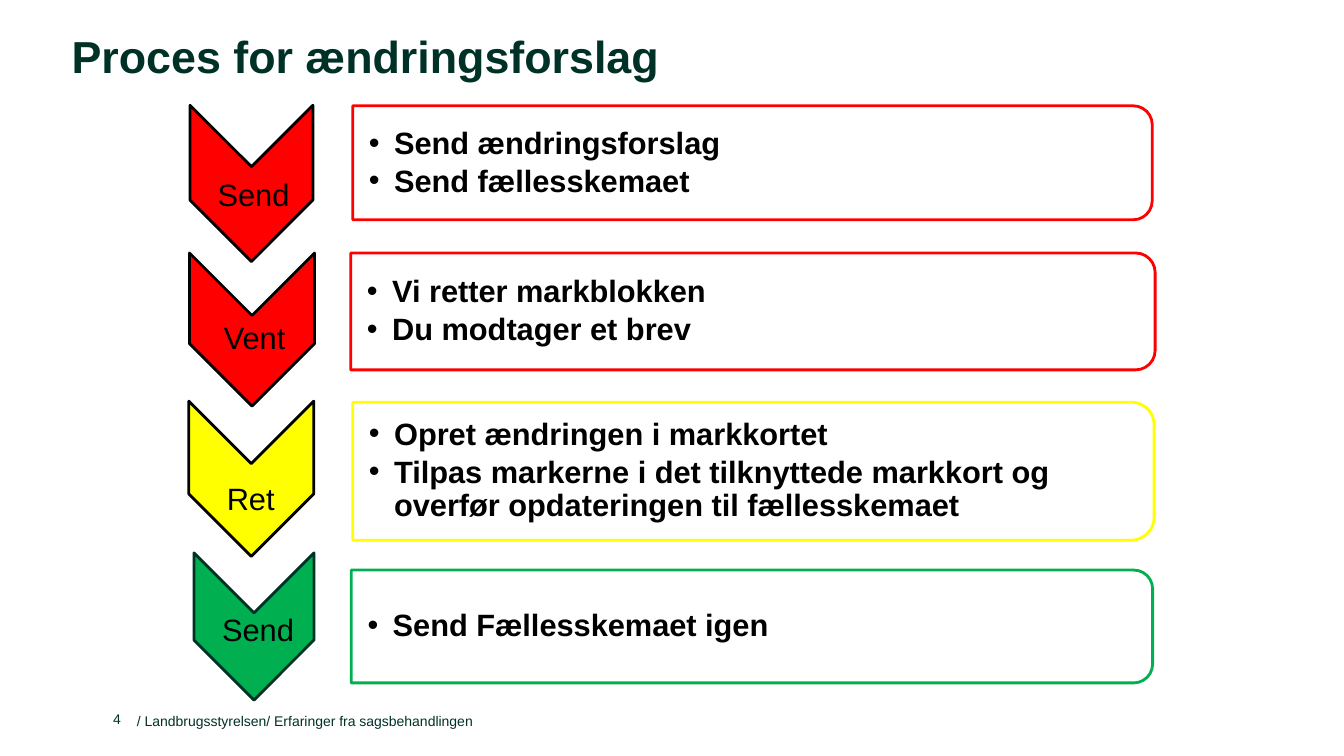
from dataclasses import dataclass

import lxml.etree
import pptx
import pptx.dml.color
import pptx.enum.shapes
import pptx.enum.text
import pptx.oxml.ns
import pptx.util

Pt = pptx.util.Pt
Shape = pptx.enum.shapes.MSO_SHAPE
Align = pptx.enum.text.PP_ALIGN
Anchor = pptx.enum.text.MSO_ANCHOR
qn = pptx.oxml.ns.qn

HUES = {"ink": "003127", "text": "000000", "paper": "FFFFFF",
        "red": "FF0000", "yellow": "FFFF00", "green": "00B050"}
FONT = "Arial"


@dataclass
class Box:
    left: float
    top: float
    width: float
    height: float


@dataclass
class Turned:
    """A shape turned a quarter: its centre, and its size before the turn."""
    mid_x: float
    mid_y: float
    width: float
    height: float


@dataclass
class Step:
    label: str
    hue: str
    edge: str
    arrow: Turned
    tag: Box
    panel: Turned
    area: Box
    lines: list[str]


STEPS = [
    Step("Send", "red", "text", Turned(179.6, 131, 111.6, 87.8),
         Box(136.8, 125.3, 88.6, 30.2), Turned(537.5, 116.3, 81.4, 571),
         Box(252, 79.9, 567.4, 73.4),
         ["Send ændringsforslag", "Send fællesskemaet"]),
    Step("Vent", "red", "text", Turned(180, 235.4, 109.4, 89.3),
         Box(135.4, 226.1, 92.9, 32.4), Turned(537.8, 222.5, 83.5, 574.6),
         Box(250.6, 185, 571, 75.6),
         ["Vi retter markblokken", "Du modtager et brev"]),
    Step("Ret", "yellow", "text", Turned(179.5, 342, 110.9, 89.3),
         Box(137, 342, 84.2, 31.7), Turned(538.2, 336.6, 98.6, 572.4),
         Box(252, 291.6, 568.8, 89.3),
         ["Opret ændringen i markkortet",
          "Tilpas markerne i det tilknyttede markkort og "
          "overfør opdateringen til fællesskemaet"]),
    Step("Send", "green", "ink", Turned(181.4, 447.5, 105.1, 85.7),
         Box(146.9, 435.6, 74.9, 31.7), Turned(537.1, 447.5, 80.6, 572.4),
         Box(251, 411.1, 568.8, 72.7),
         ["Send Fællesskemaet igen"]),
]


def tint(name: str) -> pptx.dml.color.RGBColor:
    return pptx.dml.color.RGBColor.from_string(HUES[name])


def place(shape, box: Box) -> None:
    shape.left, shape.top = Pt(box.left), Pt(box.top)
    shape.width, shape.height = Pt(box.width), Pt(box.height)


def frame(shape, anchor, sides: tuple = (0, 0, 0, 0)):
    text = shape.text_frame
    text.word_wrap = True
    text.auto_size = pptx.enum.text.MSO_AUTO_SIZE.NONE
    text.vertical_anchor = anchor
    (text.margin_left, text.margin_top,
     text.margin_right, text.margin_bottom) = [Pt(side) for side in sides]
    return text


def write(para, words: str, size: float, hue: str, bold: bool = False,
          align=Align.LEFT, line: float = 1.0, after: float = 0) -> None:
    para.alignment = align
    para.line_spacing = line
    para.space_before, para.space_after = Pt(0), Pt(after)
    run = para.add_run()
    run.text = words
    run.font.name, run.font.size, run.font.bold = FONT, Pt(size), bold
    run.font.color.rgb = tint(hue)


def bullet(para) -> None:
    props = para._p.get_or_add_pPr()
    props.set("marL", str(Pt(18)))
    props.set("indent", str(Pt(-18)))
    lxml.etree.SubElement(props, qn("a:buFont")).set("typeface", FONT)
    lxml.etree.SubElement(props, qn("a:buChar")).set("char", "•")


def turn(slide, kind, spot: Turned, fill: str, edge: str):
    shape = slide.shapes.add_shape(
        kind, Pt(spot.mid_x - spot.width / 2), Pt(spot.mid_y - spot.height / 2),
        Pt(spot.width), Pt(spot.height))
    shape.rotation = 90
    shape.shadow.inherit = False
    shape.fill.solid()
    shape.fill.fore_color.rgb = tint(fill)
    shape.line.color.rgb = tint(edge)
    shape.line.width = Pt(2)
    return shape


def note(slide, box: Box, words: str, size: float, hue: str, anchor,
         sides: tuple = (0, 0, 0, 0), **look) -> None:
    shape = slide.shapes.add_textbox(0, 0, 0, 0)
    place(shape, box)
    write(frame(shape, anchor, sides).paragraphs[0], words, size, hue, **look)


def draw(slide, step: Step, holder) -> None:
    # Chevron and its label
    turn(slide, Shape.CHEVRON, step.arrow, step.hue, step.edge)
    note(slide, step.tag, step.label, 22, "text", Anchor.MIDDLE,
         (0.7, 0.7, 0.7, 0.7), align=Align.CENTER, line=0.9, after=7.7)

    # Panel with a faintly clear fill
    panel = turn(slide, Shape.ROUND_2_SAME_RECTANGLE, step.panel,
                 "paper", step.hue)
    color = panel._element.spPr.find(qn("a:solidFill"))[0]
    lxml.etree.SubElement(color, qn("a:alpha")).set("val", "90000")

    # List, brought in front of the panel
    slide.shapes._spTree.append(holder._element)
    place(holder, step.area)
    text = frame(holder, Anchor.MIDDLE, (11.5, 0.7, 0.7, 0.7))
    for spot, words in enumerate(step.lines):
        para = text.add_paragraph() if spot else text.paragraphs[0]
        para.level = 1
        bullet(para)
        write(para, words, 22, "text", bold=True, line=0.9, after=3.3)


def main() -> None:
    deck = pptx.Presentation()
    deck.slide_width, deck.slide_height = Pt(960), Pt(540)
    # The comparison layout holds a title and four bodies
    slide = deck.slides.add_slide(deck.slide_layouts[4])

    # Title
    title = slide.shapes.title
    place(title, Box(51.1, 24, 857.5, 36.7))
    write(frame(title, Anchor.MIDDLE).paragraphs[0],
          "Proces for ændringsforslag", 32, "ink", bold=True, line=0.9)

    # Steps
    bodies = [item for item in slide.placeholders
              if item.placeholder_format.idx in range(1, 5)]
    for step, holder in zip(STEPS, bodies):
        draw(slide, step, holder)

    # Page number and footer
    note(slide, Box(67, 504, 19.4, 15.8), "4", 10, "ink", Anchor.BOTTOM,
         align=Align.RIGHT)
    note(slide, Box(90.7, 504, 445, 22.3),
         "/ Landbrugsstyrelsen/ Erfaringer fra sagsbehandlingen", 10, "ink",
         Anchor.MIDDLE, (7.2, 3.6, 7.2, 3.6))

    deck.save("out.pptx")


if __name__ == "__main__":
    main()
